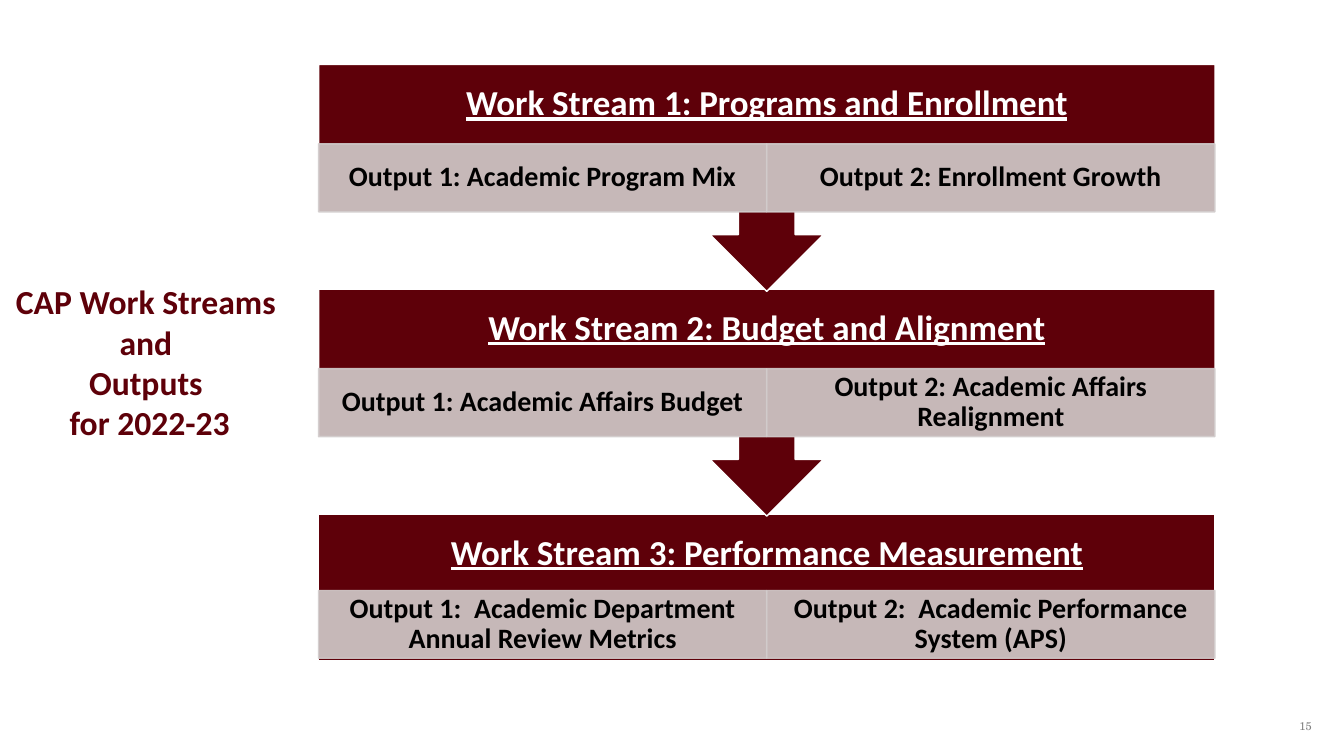
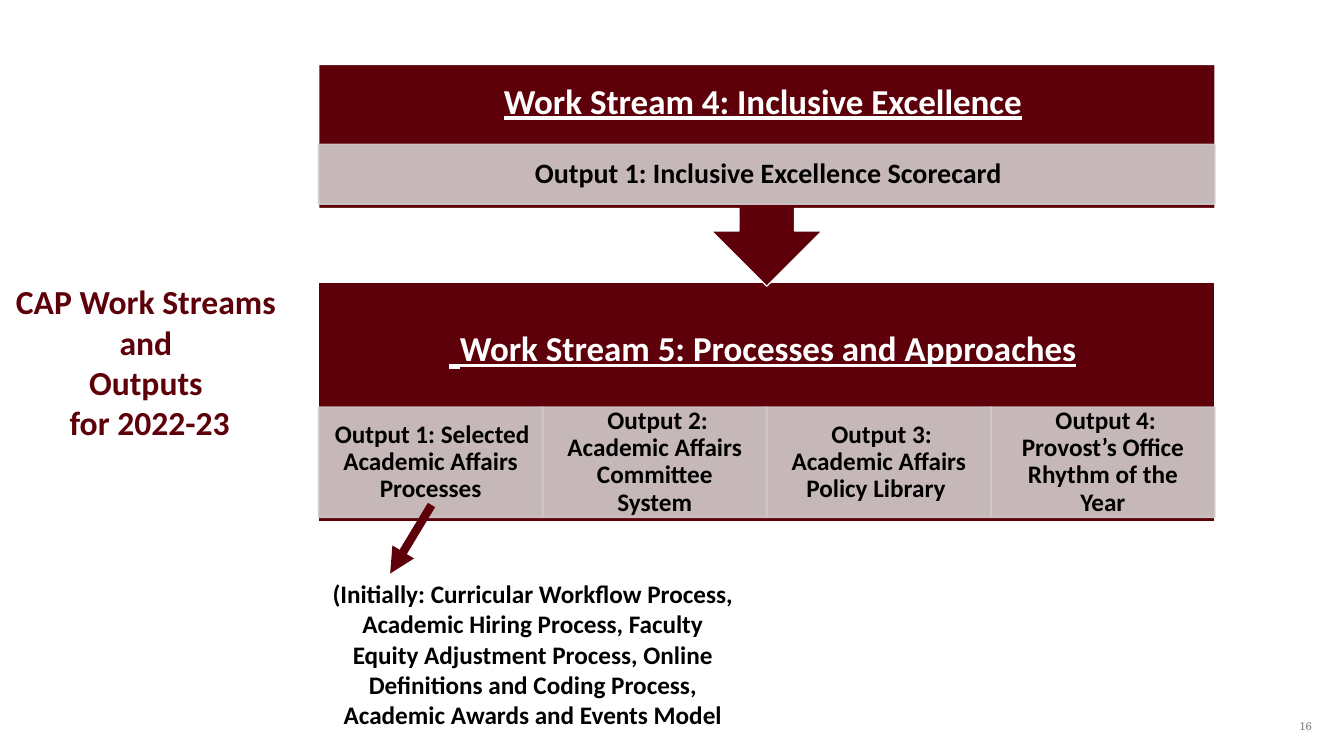
from dataclasses import dataclass

from pptx import Presentation
from pptx.dml.color import RGBColor
from pptx.enum.shapes import MSO_CONNECTOR, MSO_SHAPE
from pptx.enum.text import MSO_ANCHOR, PP_ALIGN
from pptx.oxml.ns import qn
from pptx.util import Inches, Pt

RECT, CALLOUT = MSO_SHAPE.RECTANGLE, MSO_SHAPE.DOWN_ARROW_CALLOUT
STRAIGHT = MSO_CONNECTOR.STRAIGHT
TOP, MIDDLE = MSO_ANCHOR.TOP, MSO_ANCHOR.MIDDLE
CENTER, RIGHT = PP_ALIGN.CENTER, PP_ALIGN.RIGHT


@dataclass(frozen=True)
class Theme:
    maroon: str = "5E0009"
    output_fill: str = "D2CCCC"
    white: str = "FFFFFF"
    black: str = "000000"
    grey: str = "808080"
    body_font: str = "Calibri"
    number_font: str = "TeX Gyre Schola"
    stream_size: int = 25
    side_size: int = 24
    output_size: int = 20
    small_size: int = 18
    number_size: int = 8
    output_opacity: int = 90


THEME = Theme()

# Content: a text is a string or a list of (text, format changes) runs
SIDE_TITLE = ["CAP Work Streams ", "and ", "Outputs ", "for 2022-23"]
UNLINED_SPACE = (" ", {"underline": False})
SMALL_SPACE = (" ", {"size": 10})
NOTE = ("(Initially: Curricular Workflow Process, Academic Hiring Process, "
        "Faculty Equity Adjustment Process, Online Definitions and Coding Process, "
        "Academic Awards and Events Model")

# Shares of a block's height: title height, top of outputs, height of outputs
CALLOUT_SHARES = (0.35, 0.35, 0.3)
LAST_SHARES = (0.54, 0.52, 0.46)

SLIDES = [
    {"number": "15", "streams": [
        {"title": "Work Stream 1: Programs and Enrollment", "top": 0.64, "height": 2.25,
         "outputs": ["Output 1: Academic Program Mix", "Output 2: Enrollment Growth"]},
        {"title": "Work Stream 2: Budget and Alignment", "top": 2.87, "height": 2.25,
         "outputs": ["Output 1: Academic Affairs Budget",
                     "Output 2: Academic Affairs Realignment"]},
        {"title": "Work Stream 3: Performance Measurement", "top": 5.1, "height": 1.46,
         "outputs": ["Output 1:  Academic Department Annual Review Metrics",
                     "Output 2:  Academic Performance System (APS)"]},
    ]},
    {"number": "16", "note": NOTE, "streams": [
        {"title": [("Work Stream 4: Inclusive Excellence", {}), UNLINED_SPACE],
         "top": 0.64, "height": 2.2, "shares": (0.35, 0.36, 0.27),
         "outputs": [[SMALL_SPACE, ("Output 1: Inclusive Excellence Scorecard", {})]]},
        {"title": [(" ", {"size": 33}), ("Work Stream 5: Processes and Approaches", {}),
                   UNLINED_SPACE],
         "top": 2.8, "height": 2.38, "margin": 0.26,
         "output_size": THEME.small_size, "output_margins": (0.14, 0.03),
         "outputs": [[SMALL_SPACE, ("Output 1: Selected Academic Affairs Processes", {})],
                     " Output 2: Academic Affairs Committee System",
                     " Output 3: Academic Affairs Policy Library ",
                     " Output 4: Provost’s Office Rhythm of the Year"]},
    ]},
]

# Layout in inches
SLIDE_SIZE = (13.33, 7.5)
STREAM_LEFT, STREAM_WIDTH = 3.16, 8.89
SIDE_BOX = (0, 2.74, 2.97, 2.02)
NUMBER_BOX = (12.77, 7.1, 0.34, 0.2)
NOTE_BOX = (STREAM_LEFT, 5.69, 4.25, 1.62)
NOTE_ARROW = (4.28, 5.01, 3.87, 5.69)
TIGHT_MARGINS = (0.08, 0.01)


def inches(lengths):
    return [Inches(length) for length in lengths]


def write(holder, paragraphs, *, size, color=THEME.black, font=THEME.body_font,
          bold=True, underline=False, align=CENTER, anchor=TOP,
          margins=(0.1, 0.05), spacing=None):
    """Fill a shape or text box with paragraphs in one format."""
    frame = holder.text_frame
    frame.word_wrap = True
    frame.vertical_anchor = anchor
    frame.margin_left = frame.margin_right = Inches(margins[0])
    frame.margin_top = frame.margin_bottom = Inches(margins[1])
    for index, content in enumerate(paragraphs):
        paragraph = frame.add_paragraph() if index else frame.paragraphs[0]
        paragraph.alignment = align
        if spacing:
            paragraph.line_spacing = spacing
        runs = [(content, {})] if isinstance(content, str) else content
        for text, changes in runs:
            run = paragraph.add_run()
            run.text = text
            run.font.name = font
            run.font.size = Pt(changes.get("size", size))
            run.font.bold = bold
            run.font.underline = changes.get("underline", underline)
            run.font.color.rgb = RGBColor.from_string(color)


def add_text(slide, box, paragraphs, **fmt):
    write(slide.shapes.add_textbox(*inches(box)), paragraphs, **fmt)


def add_block(slide, kind, box, fill, line, opacity=100):
    block = slide.shapes.add_shape(kind, *inches(box))
    block.shadow.inherit = False
    block.fill.solid()
    block.fill.fore_color.rgb = RGBColor.from_string(fill)
    block.line.color.rgb = RGBColor.from_string(line)
    block.line.width = Pt(1)
    if opacity < 100:
        for color in block._element.spPr.iter(qn("a:srgbClr")):
            alpha = color.makeelement(qn("a:alpha"), {"val": str(opacity * 1000)})
            color.append(alpha)
    return block


def add_arrow(slide, ends, color, width):
    arrow = slide.shapes.add_connector(STRAIGHT, *inches(ends))
    arrow.line.color.rgb = RGBColor.from_string(color)
    arrow.line.width = Pt(width)
    line = arrow.line._get_or_add_ln()
    line.append(line.makeelement(qn("a:tailEnd"), {"type": "triangle"}))
    properties = arrow._element.spPr
    properties.append(properties.makeelement(qn("a:effectLst"), {}))


def add_stream(slide, stream, is_last):
    top, height = stream["top"], stream["height"]
    default_shares = LAST_SHARES if is_last else CALLOUT_SHARES
    title_share, output_top, output_share = stream.get("shares", default_shares)

    # Maroon block with its title
    add_block(slide, RECT if is_last else CALLOUT,
              (STREAM_LEFT, top, STREAM_WIDTH, height), THEME.maroon, THEME.white)
    margin = stream.get("margin", 0.19)
    add_text(slide, (STREAM_LEFT, top, STREAM_WIDTH, title_share * height),
             [stream["title"]], size=THEME.stream_size, color=THEME.white,
             underline=True, anchor=MIDDLE, margins=(margin, margin), spacing=0.9)

    # Outputs in equal columns
    outputs = stream["outputs"]
    column = STREAM_WIDTH / len(outputs)
    for index, output in enumerate(outputs):
        box = (STREAM_LEFT + index * column, top + output_top * height,
               column, output_share * height)
        cell = add_block(slide, RECT, box, THEME.output_fill, THEME.output_fill,
                         THEME.output_opacity)
        roomy = stream.get("output_margins", (0.16, 0.03))
        write(cell, [output], size=stream.get("output_size", THEME.output_size),
              anchor=MIDDLE, spacing=0.9,
              margins=roomy if isinstance(output, str) else TIGHT_MARGINS)


def add_slide(deck, content):
    slide = deck.slides.add_slide(deck.slide_layouts[6])
    add_text(slide, NUMBER_BOX, [content["number"]], size=THEME.number_size,
             color=THEME.grey, font=THEME.number_font, bold=False, align=RIGHT,
             anchor=MIDDLE)
    # From the bottom up, so each arrow tip lies over the next block
    streams = content["streams"]
    for stream in reversed(streams):
        add_stream(slide, stream, stream is streams[-1])
    add_text(slide, SIDE_BOX, SIDE_TITLE, size=THEME.side_size, color=THEME.maroon)
    if "note" in content:
        add_text(slide, NOTE_BOX, [content["note"]], size=THEME.small_size)
        add_arrow(slide, NOTE_ARROW, THEME.maroon, 6)


def main():
    deck = Presentation()
    deck.slide_width, deck.slide_height = inches(SLIDE_SIZE)
    for content in SLIDES:
        add_slide(deck, content)
    deck.save("out.pptx")


if __name__ == "__main__":
    main()
